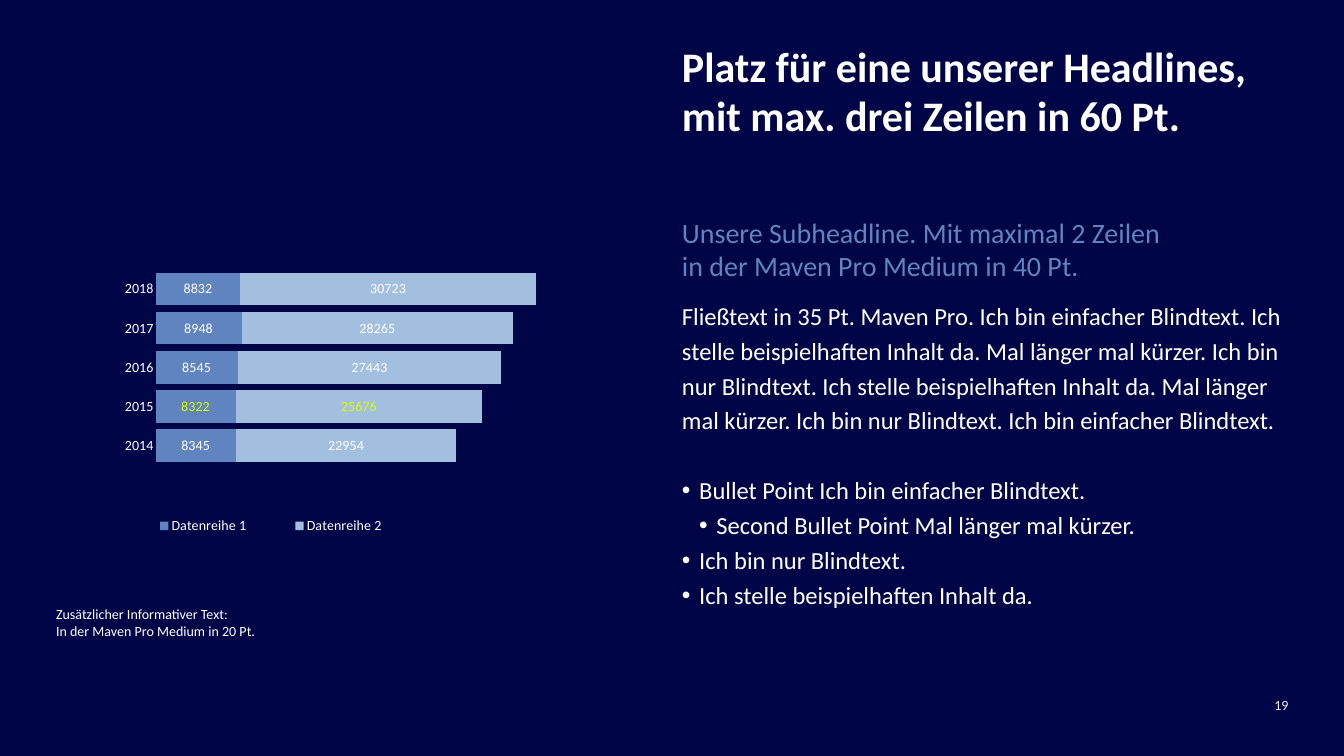
"""Build a dark slide with a stacked bar chart beside a headline and body text."""
from lxml.etree import SubElement
from pptx import Presentation
from pptx.chart.data import CategoryChartData
from pptx.dml.color import RGBColor
from pptx.enum.chart import XL_CHART_TYPE as ChartType, XL_LABEL_POSITION as LabelPosition
from pptx.enum.chart import XL_LEGEND_POSITION as LegendPosition, XL_TICK_MARK as TickMark
from pptx.enum.text import MSO_ANCHOR as Anchor, MSO_AUTO_SIZE as AutoSize, PP_ALIGN as Align
from pptx.oxml.ns import qn
from pptx.util import Pt

FONT = "Calibri"
NAVY, WHITE, PALE, BLUE, LIGHT_BLUE, LIME = "000548", "FFFFFF", "F0F0F0", "6084BF", "A2BFE0", "D7FF00"
WIDTH, HEIGHT = 1919.52, 1080
MARGIN, RIGHT_COLUMN = 80, 974
LEFT_WIDTH, RIGHT_WIDTH = 777, 866
INDENT, BULLET_LINE = 24.6, 50

HEADLINE = "Platz für eine unserer Headlines, mit max. drei Zeilen in 60 Pt."
SUBHEADLINE = "Unsere Subheadline. Mit maximal 2 Zeilen\vin der Maven Pro Medium in 40 Pt."
BODY = (
    "Fließtext in 35 Pt. Maven Pro. Ich bin einfacher Blindtext. Ich stelle beispielhaften Inhalt da. "
    "Mal länger mal kürzer. Ich bin nur Blindtext. Ich stelle beispielhaften Inhalt da. "
    "Mal länger mal kürzer. Ich bin nur Blindtext. Ich bin einfacher Blindtext."
)
BULLETS = [
    (1, "Bullet Point Ich bin einfacher Blindtext."),
    (2, "Second Bullet Point Mal länger mal kürzer."),
    (1, "Ich bin nur Blindtext."),
    (1, "Ich stelle beispielhaften Inhalt da."),
]
NOTE = ["Zusätzlicher Informativer Text:", "In der Maven Pro Medium in 20 Pt."]
PAGE_NUMBER = "19"

YEARS = ["2014", "2015", "2016", "2017", "2018"]
HIGHLIGHTED_YEAR = "2015"
SERIES = [
    ("Datenreihe 1", BLUE, [8345, 8322, 8545, 8948, 8832]),
    ("Datenreihe 2", LIGHT_BLUE, [22954, 25676, 27443, 28265, 30723]),
]
AXIS_MAXIMUM = 45000
PLOT_LAYOUT = {"layoutTarget": "inner", "xMode": "edge", "yMode": "edge",
               "x": 0.183, "y": 0.202, "w": 0.795, "h": 0.384}
LEGEND_LAYOUT = {"xMode": "edge", "yMode": "edge", "x": 0.11, "y": 0.68, "w": 0.57, "h": 0.05}


def color(hex_code):
    return RGBColor.from_string(hex_code)


def style_font(font, size, hex_code, bold=False):
    font.name, font.size, font.bold = FONT, Pt(size), bold
    font.color.rgb = color(hex_code)


def prepare_frame(shape):
    frame = shape.text_frame
    frame.word_wrap, frame.auto_size, frame.vertical_anchor = True, AutoSize.NONE, Anchor.TOP
    frame.margin_left = frame.margin_top = frame.margin_right = frame.margin_bottom = 0
    return frame


def add_text_box(slide, left, top, width, height):
    return prepare_frame(slide.shapes.add_textbox(Pt(left), Pt(top), Pt(width), Pt(height)))


def write(paragraph, text, size, hex_code, bold=False, align=Align.LEFT, line_spacing=1.0):
    paragraph.text, paragraph.alignment, paragraph.line_spacing = text, align, line_spacing
    style_font(paragraph.font, size, hex_code, bold)


def add_bullet(paragraph, level):
    properties = paragraph._p.get_or_add_pPr()
    properties.set("marL", str(Pt(INDENT * level)))
    properties.set("indent", str(-Pt(INDENT)))
    SubElement(properties, qn("a:buFont"), typeface="Arial")
    SubElement(properties, qn("a:buChar"), char="•")


def set_layout(element, values):
    for old in element.findall(qn("c:layout")):
        element.remove(old)
    layout = SubElement(element, qn("c:layout"))
    manual = SubElement(layout, qn("c:manualLayout"))
    for name, value in values.items():
        SubElement(manual, qn(f"c:{name}"), val=str(value))
    return layout


def add_title(slide):
    title = slide.shapes.title
    title.left, title.top, title.width, title.height = Pt(RIGHT_COLUMN), Pt(62.6), Pt(RIGHT_WIDTH), Pt(216)
    write(prepare_frame(title).paragraphs[0], HEADLINE, 60, WHITE, bold=True, line_spacing=0.97)


def add_body(slide):
    frame = add_text_box(slide, RIGHT_COLUMN, 307.4, RIGHT_WIDTH, 658)
    write(frame.paragraphs[0], SUBHEADLINE, 40, BLUE)
    frame.paragraphs[0].space_after = Pt(18)
    write(frame.add_paragraph(), BODY, 35, WHITE, line_spacing=1.19)
    for index, (level, text) in enumerate(BULLETS):
        paragraph = frame.add_paragraph()
        add_bullet(paragraph, level)
        write(paragraph, text, 35, WHITE, line_spacing=1.19)
        if index == 0:
            paragraph.space_before = Pt(BULLET_LINE)


def add_bar_chart(slide):
    data = CategoryChartData()
    data.categories = YEARS
    for name, _, values in SERIES:
        data.add_series(name, values)
    chart = slide.shapes.add_chart(ChartType.BAR_STACKED, Pt(MARGIN), Pt(237.6),
                                   Pt(LEFT_WIDTH), Pt(728.6), data).chart
    style_font(chart.font, 20, WHITE)
    chart.has_title = False

    years = chart.category_axis
    years.major_tick_mark = years.minor_tick_mark = TickMark.NONE
    years.format.line.fill.background()
    style_font(years.tick_labels.font, 20, WHITE)
    amounts = chart.value_axis
    amounts.visible = amounts.has_major_gridlines = False
    amounts.minimum_scale, amounts.maximum_scale = 0, AXIS_MAXIMUM

    plot = chart.plots[0]
    plot.gap_width, plot.overlap, plot.vary_by_categories = 20, 100, False
    for series, (_, fill, _) in zip(plot.series, SERIES):
        series.format.fill.solid()
        series.format.fill.fore_color.rgb = color(fill)
        labels = series.data_labels
        labels.show_value, labels.position = True, LabelPosition.CENTER
        style_font(labels.font, 20, WHITE)
        highlight = series.points[YEARS.index(HIGHLIGHTED_YEAR)].data_label
        style_font(highlight.font, 20, LIME)
        highlight.position = LabelPosition.CENTER

    chart.has_legend = True
    legend = chart.legend
    legend.position, legend.include_in_layout = LegendPosition.RIGHT, False
    style_font(legend.font, 20, WHITE)
    legend_element = legend._element
    legend_element.find(qn("c:legendPos")).addnext(set_layout(legend_element, LEGEND_LAYOUT))
    plot_area = chart._chartSpace.chart.plotArea
    plot_area.insert(0, set_layout(plot_area, PLOT_LAYOUT))


def add_note(slide):
    frame = add_text_box(slide, MARGIN, 864.7, LEFT_WIDTH, 101)
    for index, text in enumerate(NOTE):
        write(frame.add_paragraph() if index else frame.paragraphs[0], text, 20, WHITE)


def main():
    presentation = Presentation()
    presentation.slide_width, presentation.slide_height = Pt(WIDTH), Pt(HEIGHT)
    slide = presentation.slides.add_slide(presentation.slide_layouts[5])
    slide.background.fill.solid()
    slide.background.fill.fore_color.rgb = color(NAVY)
    add_title(slide)
    add_body(slide)
    add_bar_chart(slide)
    add_note(slide)
    number = add_text_box(slide, 1755.4, 994.3, 85, 34)
    write(number.paragraphs[0], PAGE_NUMBER, 20, PALE, align=Align.RIGHT)
    presentation.save("out.pptx")


if __name__ == "__main__":
    main()
